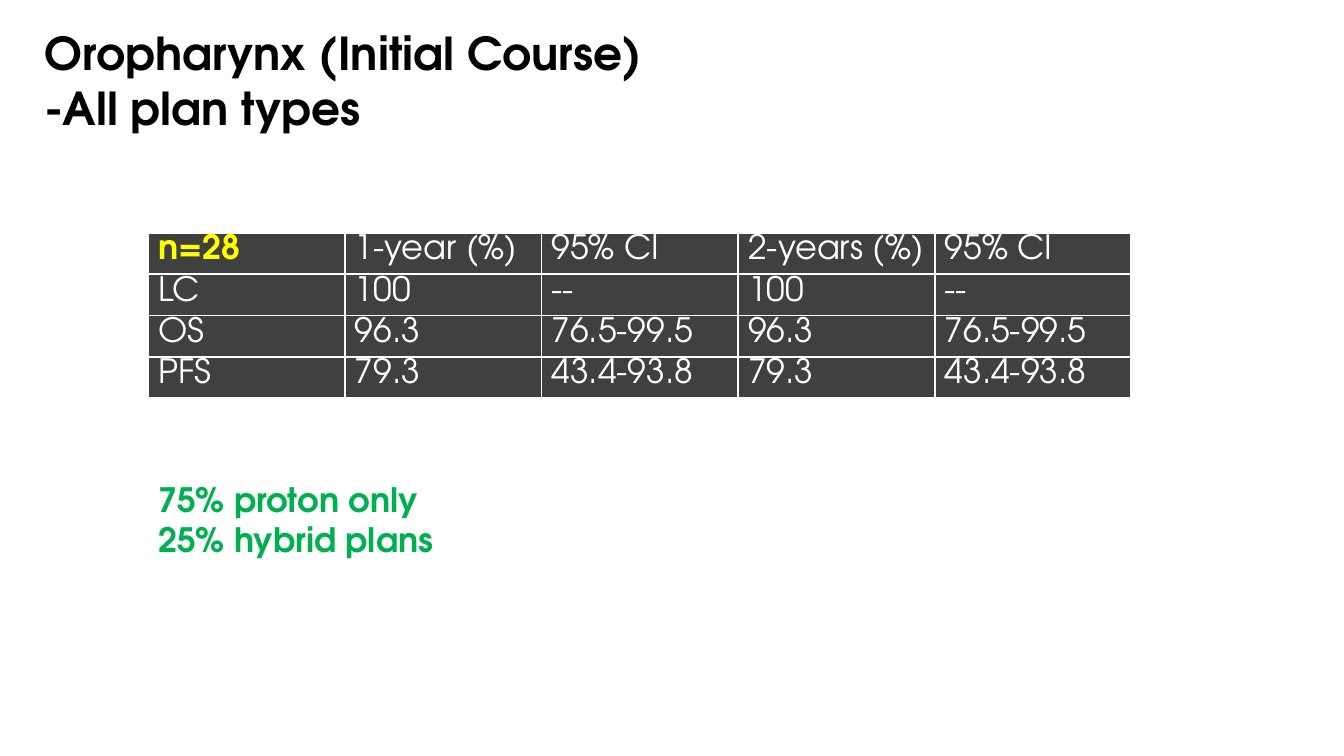
from copy import deepcopy
from pptx import Presentation
from pptx.util import Inches, Pt
from pptx.dml.color import RGBColor as RGB
from pptx.enum.text import MSO_ANCHOR as Anchor, MSO_AUTO_SIZE as Auto, PP_ALIGN as Align
from pptx.oxml import parse_xml
from pptx.oxml.ns import nsdecls, qn

BLACK = RGB(0, 0, 0)
WHITE = RGB(255, 255, 255)
GRAY = RGB(0x40, 0x40, 0x40)
YELLOW = RGB(255, 255, 0)
GREEN = RGB(0, 0xB0, 0x50)
FONT = "TeX Gyre Adventor"

WIDE, HIGH = Inches(13.33), Inches(7.5)
LEFT, TOP = 11.03, 30.8
COL, ROW = 14.63, 5.47

FIRST = [
    ["n=28", "1-year (%)", "95% CI"],
    ["LC", "100", "--"],
    ["OS", "96.3", "76.5-99.5"],
    ["PFS", "79.3", "43.4-93.8"],
]
SECOND = [
    ["2-years (%)", "95% CI"],
    ["100", "--"],
    ["96.3", "76.5-99.5"],
    ["79.3", "43.4-93.8"],
]


def across(share):
    return int(WIDE * share / 100)


def down(share):
    return int(HIGH * share / 100)


def area(x, y, w, h):
    return across(x), down(y), across(w), down(h)


def write(frame, text, size=24, color=WHITE, bold=False, line=1.0):
    frame.text = text
    for para in frame.paragraphs:
        para.alignment = Align.LEFT
        para.line_spacing = line
        for run in para.runs:
            font = run.font
            font.name, font.size, font.bold = FONT, Pt(size), bold
            font.color.rgb = color
        for gap in para._p.findall(qn("a:br")):
            gap.insert(0, deepcopy(para.runs[0].font._element))


def border(cell, color=WHITE, width=1.5):
    props = cell._tc.get_or_add_tcPr()
    for place, side in enumerate(("lnL", "lnR", "lnT", "lnB")):
        props.insert(place, parse_xml(
            f'<a:{side} {nsdecls("a")} w="{Pt(width)}"><a:solidFill>'
            f'<a:srgbClr val="{color}"/></a:solidFill></a:{side}>'))


def grid(slide, data, x):
    rows, cols = len(data), len(data[0])
    table = slide.shapes.add_table(
        rows, cols, *area(x, TOP, COL * cols, ROW * rows)).table
    table.first_row = table.horz_banding = False
    for col in table.columns:
        col.width = across(COL)
    for row, texts in zip(table.rows, data):
        row.height = down(ROW)
        for cell, text in zip(row.cells, texts):
            head = text.startswith("n=")
            cell.margin_top, cell.margin_bottom = Inches(0.04), 0
            cell.fill.solid()
            cell.fill.fore_color.rgb = GRAY
            border(cell)
            write(cell.text_frame, text, color=YELLOW if head else WHITE,
                  bold=head, line=0.92)


def title(slide, text):
    shape = slide.shapes.title
    shape.left, shape.top, shape.width, shape.height = area(2.55, 2.67, 73.14, 10.8)
    frame = shape.text_frame
    frame.auto_size = Auto.NONE
    frame.vertical_anchor = Anchor.TOP
    write(frame, text, size=32.4, color=BLACK, bold=True)


def note(slide, text):
    frame = slide.shapes.add_textbox(*area(LEFT, 62.67, 64.59, 12.13)).text_frame
    frame.word_wrap = True
    frame.auto_size = Auto.SHAPE_TO_FIT_TEXT
    write(frame, text, color=GREEN, bold=True)


def main():
    deck = Presentation()
    deck.slide_width, deck.slide_height = WIDE, HIGH
    slide = deck.slides.add_slide(deck.slide_layouts[5])
    title(slide, "Oropharynx (Initial Course)\v-All plan types")
    grid(slide, FIRST, LEFT)
    grid(slide, SECOND, LEFT + COL * len(FIRST[0]))
    note(slide, "75% proton only\n25% hybrid plans")
    deck.save("out.pptx")


if __name__ == "__main__":
    main()
